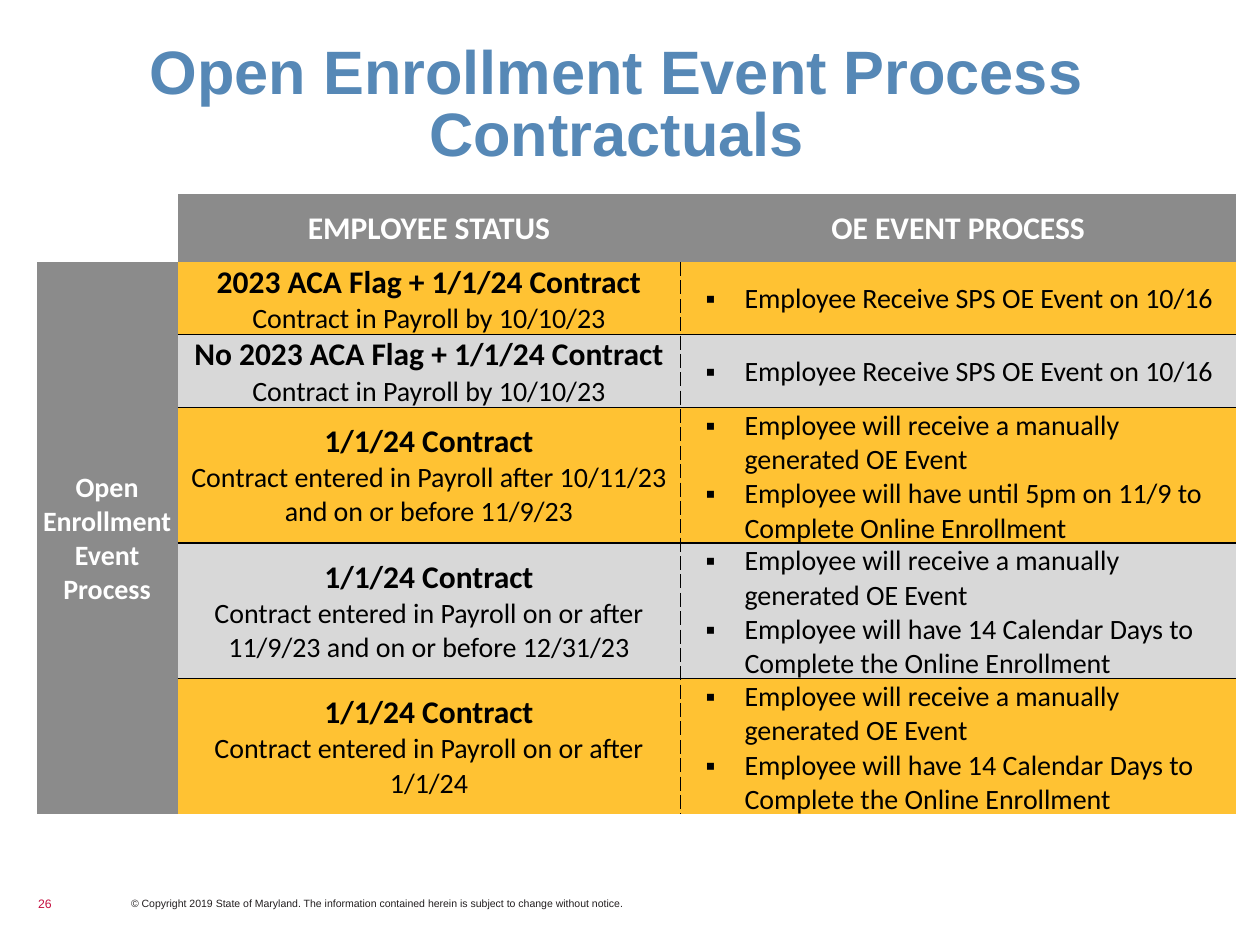
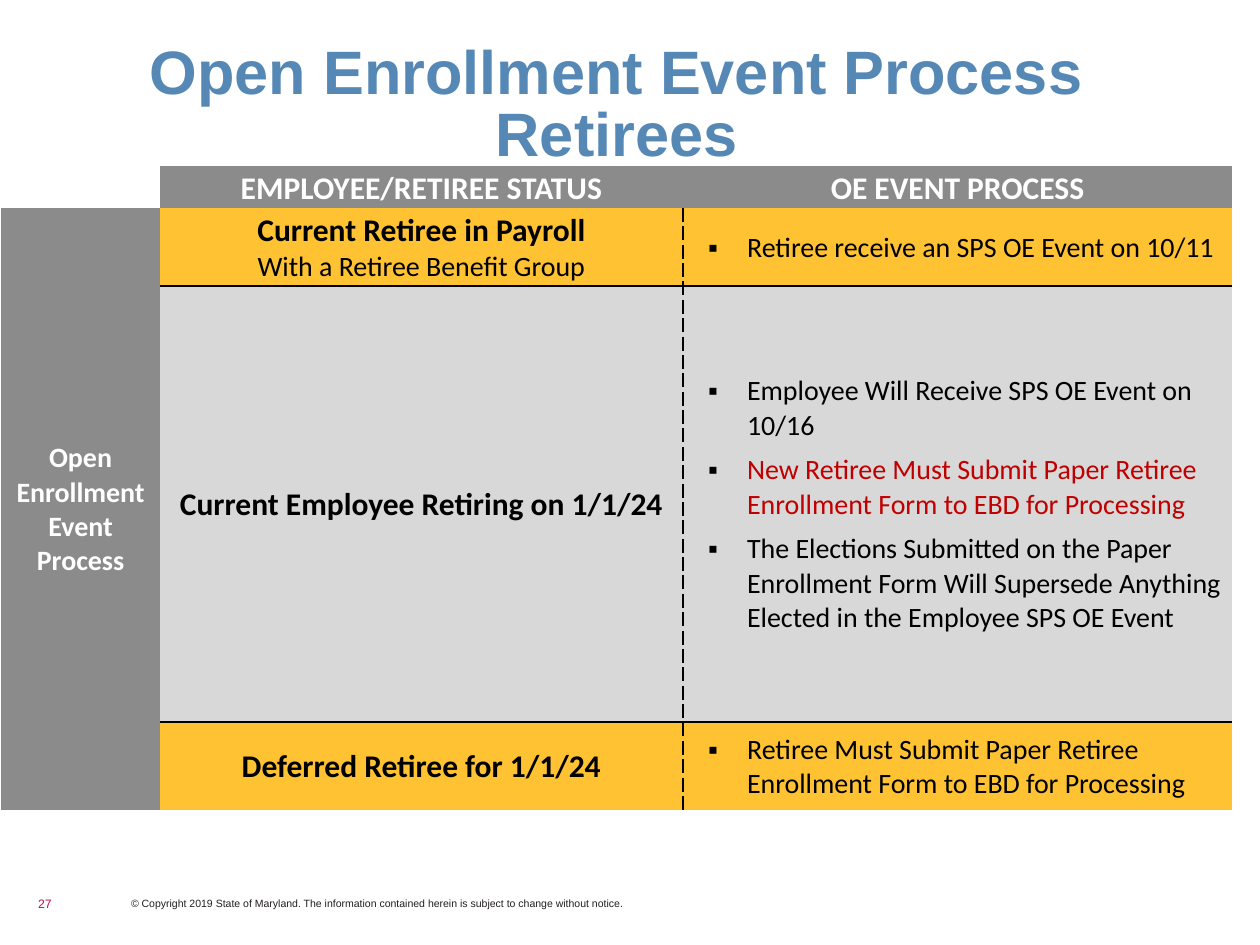
"""Build two slides on the open enrollment event process."""
from dataclasses import dataclass

from lxml import etree
from pptx import Presentation
from pptx.dml.color import RGBColor
from pptx.enum.text import MSO_ANCHOR, PP_ALIGN
from pptx.oxml.ns import qn
from pptx.util import Inches, Pt

LEFT, CENTER, RIGHT = PP_ALIGN.LEFT, PP_ALIGN.CENTER, PP_ALIGN.RIGHT
TOP, MIDDLE, BOTTOM = MSO_ANCHOR.TOP, MSO_ANCHOR.MIDDLE, MSO_ANCHOR.BOTTOM
BLANK_LAYOUT = 6
PLAIN_TABLE_STYLE = "{2D5ABB26-0587-4C30-8999-92F81FD0307C}"
COPYRIGHT = (
    "© Copyright 2019 State of Maryland. "
    "The information contained herein is subject to change without notice."
)
SIDE_LABEL = "Open Enrollment Event Process"
PROCESS_HEADER = "OE EVENT PROCESS"


@dataclass(frozen=True)
class Theme:
    title_font: str = "Arial"
    table_font: str = "Calibri"
    title_color: str = "5688B6"
    number_color: str = "C40E3E"
    copyright_color: str = "231F20"
    header_fill: str = "8B8B8B"
    row_fills: tuple = ("FFC233", "D8D8D8")
    light: str = "FFFFFF"
    dark: str = "000000"
    alert: str = "C00000"
    title_size: int = 35
    heading_size: int = 18
    body_size: int = 16
    number_size: int = 7
    copyright_size: int = 6


def write(para, text, *, size, color, font, bold=False, align=LEFT):
    para.alignment = align
    span = para.add_run()
    span.text = text
    span.font.size = Pt(size)
    span.font.name = font
    span.font.bold = bold
    span.font.color.rgb = RGBColor.from_string(color)


def add_bullet(para, color):
    properties = para._p.get_or_add_pPr()
    properties.set("marL", str(Inches(0.5)))
    properties.set("indent", str(Inches(-0.31)))
    bullet_color = etree.SubElement(properties, qn("a:buClr"))
    etree.SubElement(bullet_color, qn("a:srgbClr"), val=color)
    etree.SubElement(properties, qn("a:buFont"), typeface="Arial")
    etree.SubElement(properties, qn("a:buChar"), char="▪")


def add_border(cell, side, color, dash="solid"):
    line = etree.SubElement(
        cell._tc.get_or_add_tcPr(), qn(f"a:ln{side}"), w=str(Pt(1))
    )
    fill = etree.SubElement(line, qn("a:solidFill"))
    etree.SubElement(fill, qn("a:srgbClr"), val=color)
    etree.SubElement(line, qn("a:prstDash"), val=dash)


class SlideBuilder:
    def __init__(self, deck, theme):
        self.deck = deck
        self.theme = theme
        self.page = None

    def start_page(self, title, number):
        theme = self.theme
        self.page = self.deck.slides.add_slide(
            self.deck.slide_layouts[BLANK_LAYOUT]
        )
        self.text_box(
            title, 0.29, 0.35, 9.21, 0.52, anchor=TOP, line_spacing=0.85,
            size=theme.title_size, color=theme.title_color, bold=True,
            align=CENTER,
        )
        self.text_box(
            str(number), 0.29, 7.11, 0.12, 0.12, size=theme.number_size,
            color=theme.number_color, align=RIGHT,
        )
        self.text_box(
            COPYRIGHT, 1.04, 7.12, 3.96, 0.1, size=theme.copyright_size,
            color=theme.copyright_color,
        )

    def text_box(self, text, left, top, width, height, *, anchor=MIDDLE,
                 line_spacing=1.0, **style):
        box = self.page.shapes.add_textbox(
            Inches(left), Inches(top), Inches(width), Inches(height)
        )
        frame = box.text_frame
        frame.word_wrap = True
        frame.vertical_anchor = anchor
        frame.margin_left = frame.margin_right = 0
        frame.margin_top = frame.margin_bottom = 0
        para = frame.paragraphs[0]
        para.line_spacing = line_spacing
        write(para, text, font=self.theme.title_font, **style)

    def label_cell(self, cell, text, size, anchor=MIDDLE):
        theme = self.theme
        self.fill_cell(cell, theme.header_fill)
        cell.vertical_anchor = anchor
        write(
            cell.text_frame.paragraphs[0], text, size=size, color=theme.light,
            font=theme.table_font, bold=True, align=CENTER,
        )

    def status_cell(self, cell, heading, detail):
        theme = self.theme
        para = cell.text_frame.paragraphs[0]
        style = dict(color=theme.dark, font=theme.table_font, align=CENTER)
        write(para, heading, size=theme.heading_size, bold=True, **style)
        if detail:
            para.add_line_break()
            write(para, detail, size=theme.body_size, **style)

    def process_cell(self, cell, steps, alert):
        theme = self.theme
        frame = cell.text_frame
        for index, step in enumerate(steps):
            para = frame.add_paragraph() if index else frame.paragraphs[0]
            add_bullet(para, theme.dark)
            if alert in steps:
                para.space_after = Pt(6)
            write(
                para, step, size=theme.body_size, font=theme.table_font,
                color=theme.alert if step == alert else theme.dark,
            )

    def fill_cell(self, cell, color):
        cell.fill.solid()
        cell.fill.fore_color.rgb = RGBColor.from_string(color)

    def process_table(self, left, top, widths, heights, status_header, rows,
                      header_anchor=MIDDLE, alert=None):
        theme = self.theme
        table = self.page.shapes.add_table(
            len(heights), len(widths), Inches(left), Inches(top),
            Inches(sum(widths)), Inches(sum(heights)),
        ).table
        table.first_row = table.horz_banding = False
        table._tbl.tblPr.find(qn("a:tableStyleId")).text = PLAIN_TABLE_STYLE
        for column, width in zip(table.columns, widths):
            column.width = Inches(width)
        for row, height in zip(table.rows, heights):
            row.height = Inches(height)
        for cell in table.iter_cells():
            cell.margin_left = cell.margin_right = Inches(0.01)
            cell.margin_top, cell.margin_bottom = Inches(0.01), 0
            cell.vertical_anchor = MIDDLE

        for column, header in enumerate((status_header, PROCESS_HEADER), 1):
            self.label_cell(
                table.cell(0, column), header, theme.heading_size,
                header_anchor,
            )
        side = table.cell(1, 0)
        side.merge(table.cell(len(rows), 0))
        self.label_cell(side, SIDE_LABEL, theme.body_size)

        for number, (heading, detail, steps) in enumerate(rows, 1):
            status, process = table.cell(number, 1), table.cell(number, 2)
            self.status_cell(status, heading, detail)
            self.process_cell(process, steps, alert)
            for cell, inner_side in ((status, "R"), (process, "L")):
                add_border(cell, inner_side, theme.dark, "dash")
                if number > 1:
                    add_border(cell, "T", theme.dark)
                if number < len(rows):
                    add_border(cell, "B", theme.dark)
                self.fill_cell(cell, theme.row_fills[(number - 1) % 2])


def add_contractuals(builder):
    contract = "1/1/24 Contract"
    known_contract = "Contract in Payroll by 10/10/23"
    receive = ["Employee Receive SPS OE Event on 10/16"]
    manual = "Employee will receive a manually generated OE Event"
    deadline = (
        "Employee will have until 5pm on 11/9 to Complete Online Enrollment"
    )
    two_weeks = (
        "Employee will have 14 Calendar Days to "
        "Complete the Online Enrollment"
    )
    entered = "Contract entered in Payroll"
    rows = [
        (f"2023 ACA Flag + {contract}", known_contract, receive),
        (f"No 2023 ACA Flag + {contract}", known_contract, receive),
        (contract, f"{entered} after 10/11/23 and on or before 11/9/23",
         [manual, deadline]),
        (contract, f"{entered} on or after 11/9/23 and on or before 12/31/23",
         [manual, two_weeks]),
        (contract, f"{entered} on or after 1/1/24", [manual, two_weeks]),
    ]
    builder.start_page("Open Enrollment Event Process Contractuals", 26)
    builder.process_table(
        0.29, 1.54, [1.12, 3.99, 4.41], [0.54] * 3 + [1.02] * 3,
        "EMPLOYEE STATUS", rows,
    )


def add_retirees(builder):
    paper_form = "Must Submit Paper Retiree Enrollment Form to EBD for Processing"
    new_retiree = f"New Retiree {paper_form}"
    rows = [
        ("Current Retiree in Payroll", "With a Retiree Benefit Group",
         ["Retiree receive an SPS OE Event on 10/11"]),
        ("Current Employee Retiring on 1/1/24", None, [
            "Employee Will Receive SPS OE Event on 10/16",
            new_retiree,
            "The Elections Submitted on the Paper Enrollment Form Will "
            "Supersede Anything Elected in the Employee SPS OE Event",
        ]),
        ("Deferred Retiree for 1/1/24", None, [f"Retiree {paper_form}"]),
    ]
    builder.start_page("Open Enrollment Event Process Retirees", 27)
    builder.process_table(
        0.01, 1.32, [1.26, 4.15, 4.36], [0.33, 0.62, 3.46, 0.7],
        "EMPLOYEE/RETIREE STATUS", rows, header_anchor=BOTTOM,
        alert=new_retiree,
    )


def main():
    deck = Presentation()
    deck.slide_width, deck.slide_height = Inches(10), Inches(7.5)
    builder = SlideBuilder(deck, Theme())
    add_contractuals(builder)
    add_retirees(builder)
    deck.save("out.pptx")


if __name__ == "__main__":
    main()
